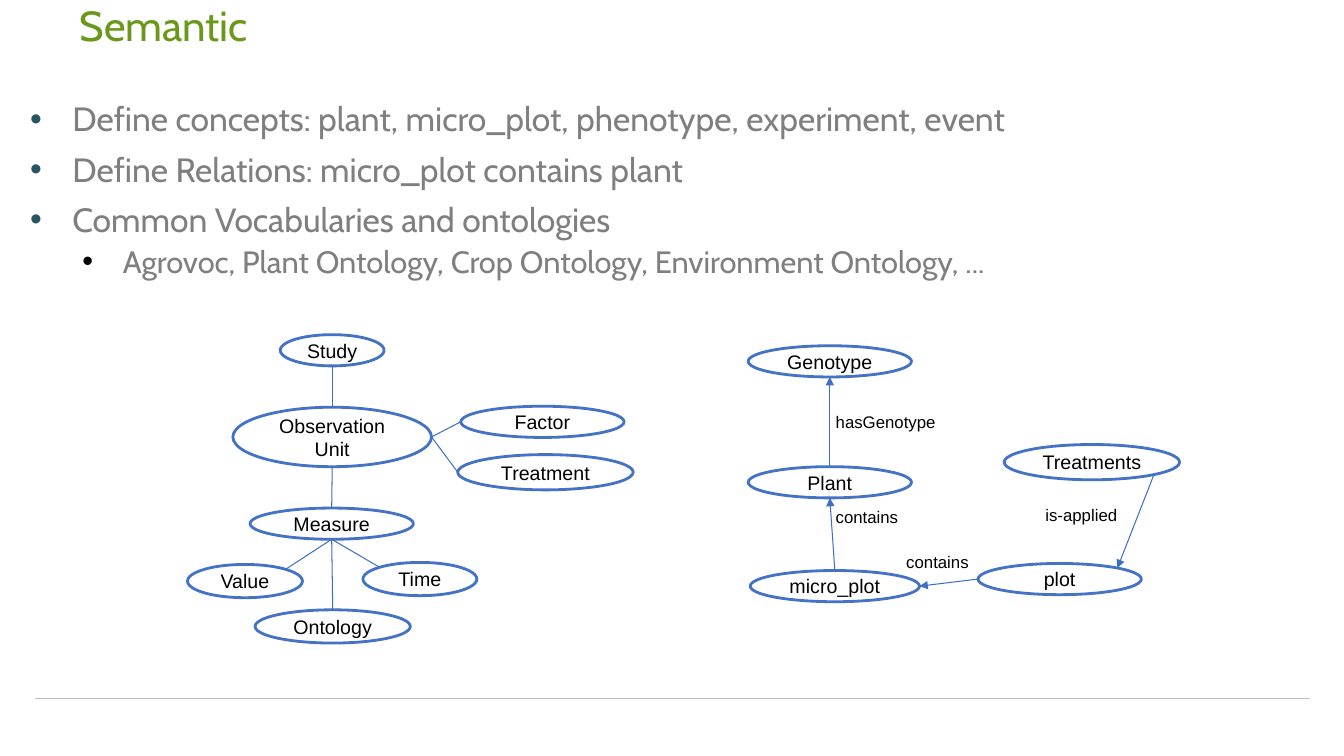
from lxml import etree
from pptx import Presentation
from pptx.dml.color import RGBColor
from pptx.enum.shapes import MSO_CONNECTOR, MSO_SHAPE
from pptx.enum.text import MSO_ANCHOR, PP_ALIGN
from pptx.oxml.ns import qn
from pptx.util import Inches, Pt

STRAIGHT = MSO_CONNECTOR.STRAIGHT
OVAL = MSO_SHAPE.OVAL
MIDDLE = MSO_ANCHOR.MIDDLE
CENTER = PP_ALIGN.CENTER

COLORS = {
    "title": "69981B", "body": "7F7F7F", "bullet": "275662", "black": "000000",
    "white": "FFFFFF", "outline": "4472C4", "link": "3F6FC3", "footer": "BFBFBF",
}
TITLE = "Semantic"
# text, level
BULLETS = [
    ("Define concepts: plant, micro_plot, phenotype, experiment, event", 0),
    ("Define Relations: micro_plot contains plant", 0),
    ("Common Vocabularies and ontologies", 0),
    ("Agrovoc, Plant Ontology, Crop Ontology, Environment Ontology, ...", 1),
]
# left margin, hanging indent (inches), space before, size (points), bullet colour
LEVELS = [(0.5, -0.42, 10, 24, "bullet"), (1.0, -0.4, 5, 22, "black")]
# left, top, width, height
CONCEPTS = {
    "Study": (2.78, 3.32, 1.03, 0.31),
    "Observation Unit": (2.31, 4.04, 1.97, 0.59),
    "Measure": (2.48, 5.04, 1.62, 0.31),
    "Value": (1.86, 5.6, 1.14, 0.33),
    "Ontology": (2.53, 6.05, 1.54, 0.33),
    "Time": (3.6, 5.58, 1.13, 0.33),
    "Treatment": (4.54, 4.51, 1.74, 0.35),
    "Factor": (4.57, 4.03, 1.62, 0.31),
    "Plant": (7.42, 4.63, 1.62, 0.31),
    "plot": (9.7, 5.59, 1.62, 0.31),
    "micro_plot": (7.44, 5.66, 1.68, 0.31),
    "Genotype": (7.42, 3.43, 1.62, 0.31),
    "Treatments": (9.96, 4.41, 1.74, 0.35),
}
# from concept, side, to concept, side, arrowhead
RELATIONS = [
    ("Study", "bottom", "Observation Unit", "top", False),
    ("Observation Unit", "bottom", "Measure", "top", False),
    ("Measure", "bottom", "Ontology", "top", False),
    ("Measure", "bottom", "Value", "top right", False),
    ("Measure", "bottom", "Time", "top left", False),
    ("Observation Unit", "right", "Treatment", "left", False),
    ("Observation Unit", "right", "Factor", "left", False),
    ("Treatments", "bottom right", "plot", "top right", True),
    ("plot", "left", "micro_plot", "right", True),
    ("micro_plot", "top", "Plant", "bottom", True),
    ("Plant", "top", "Genotype", "bottom", True),
]
# text, left, top, width
RELATION_LABELS = [
    ("contains", 8.89, 5.42, 1.13),
    ("contains", 8.19, 4.98, 1.13),
    ("hasGenotype", 8.19, 4.04, 1.68),
    ("is-applied", 10.27, 4.96, 1.26),
]
LABEL_HEIGHT = 0.38
DIAGONAL = 0.5 ** 0.5


def color(name):
    return RGBColor.from_string(COLORS[name])


def style(paragraph, font_name, size, color_name):
    font = paragraph.font
    font.name, font.size = font_name, Pt(size)
    font.color.rgb = color(color_name)


def add_text(slide, text, box, font_name, size, color_name):
    shape = slide.shapes.add_textbox(*map(Inches, box))
    frame = shape.text_frame
    frame.word_wrap = True
    frame.text = text
    style(frame.paragraphs[0], font_name, size, color_name)
    return frame


def add_bullet(paragraph, margin, indent, color_name):
    properties = paragraph._p.get_or_add_pPr()
    properties.set("marL", str(Inches(margin)))
    properties.set("indent", str(Inches(indent)))
    bullet_color = etree.SubElement(properties, qn("a:buClr"))
    etree.SubElement(bullet_color, qn("a:srgbClr"), val=COLORS[color_name])
    etree.SubElement(properties, qn("a:buFont"), typeface="Arial")
    etree.SubElement(properties, qn("a:buChar"), char="•")


def add_bullets(slide):
    shape = slide.shapes.add_textbox(*map(Inches, (0.12, 0.97, 12.83, 5.64)))
    frame = shape.text_frame
    frame.word_wrap = True
    for index, (text, level) in enumerate(BULLETS):
        margin, indent, space, size, bullet_color = LEVELS[level]
        paragraph = frame.add_paragraph() if index else frame.paragraphs[0]
        paragraph.text = text
        paragraph.level = level
        add_bullet(paragraph, margin, indent, bullet_color)
        paragraph.line_spacing = 0.9
        paragraph.space_before = Pt(space if index else 0)
        style(paragraph, "Cabin", size, "body")


def add_concept(slide, name, box):
    shape = slide.shapes.add_shape(OVAL, *map(Inches, box))
    shape.shadow.inherit = False
    shape.fill.solid()
    shape.fill.fore_color.rgb = color("white")
    shape.line.color.rgb = color("outline")
    shape.line.width = Pt(2)
    frame = shape.text_frame
    frame.word_wrap = True
    frame.vertical_anchor = MIDDLE
    frame.text = name
    frame.paragraphs[0].alignment = CENTER
    style(frame.paragraphs[0], "Arial", 14, "black")


def edge_point(concept, side):
    """Return the point of the concept's ellipse on a side or a diagonal."""
    left, top, width, height = CONCEPTS[concept]
    across = ("right" in side) - ("left" in side)
    down = ("bottom" in side) - ("top" in side)
    reach = DIAGONAL if across and down else 1
    return left + width / 2 * (1 + across * reach), top + height / 2 * (1 + down * reach)


def add_line(slide, start, end, color_name, arrow=False):
    connector = slide.shapes.add_connector(STRAIGHT, *map(Inches, (*start, *end)))
    connector.line.color.rgb = color(color_name)
    connector.line.width = Pt(0.75)
    if arrow:
        etree.SubElement(connector.line._get_or_add_ln(), qn("a:tailEnd"), type="triangle")
    etree.SubElement(connector._element.spPr, qn("a:effectLst"))


def main():
    presentation = Presentation()
    presentation.slide_width, presentation.slide_height = Inches(13.33), Inches(7.5)
    slide = presentation.slides.add_slide(presentation.slide_layouts[6])

    add_line(slide, (0.35, 6.93), (12.99, 6.93), "footer")
    add_bullets(slide)
    title = add_text(slide, TITLE, (0.79, 0, 11.2, 0.56), "Cabin", 30, "title")
    title.margin_left = 0
    title.vertical_anchor = MIDDLE
    title.paragraphs[0].line_spacing = 0.9

    for name, box in CONCEPTS.items():
        add_concept(slide, name, box)
    for source, source_side, target, target_side, arrow in RELATIONS:
        add_line(slide, edge_point(source, source_side),
                 edge_point(target, target_side), "link", arrow)
    for text, left, top, width in RELATION_LABELS:
        add_text(slide, text, (left, top, width, LABEL_HEIGHT), "Arial", 12, "black")

    presentation.save("out.pptx")


if __name__ == "__main__":
    main()
